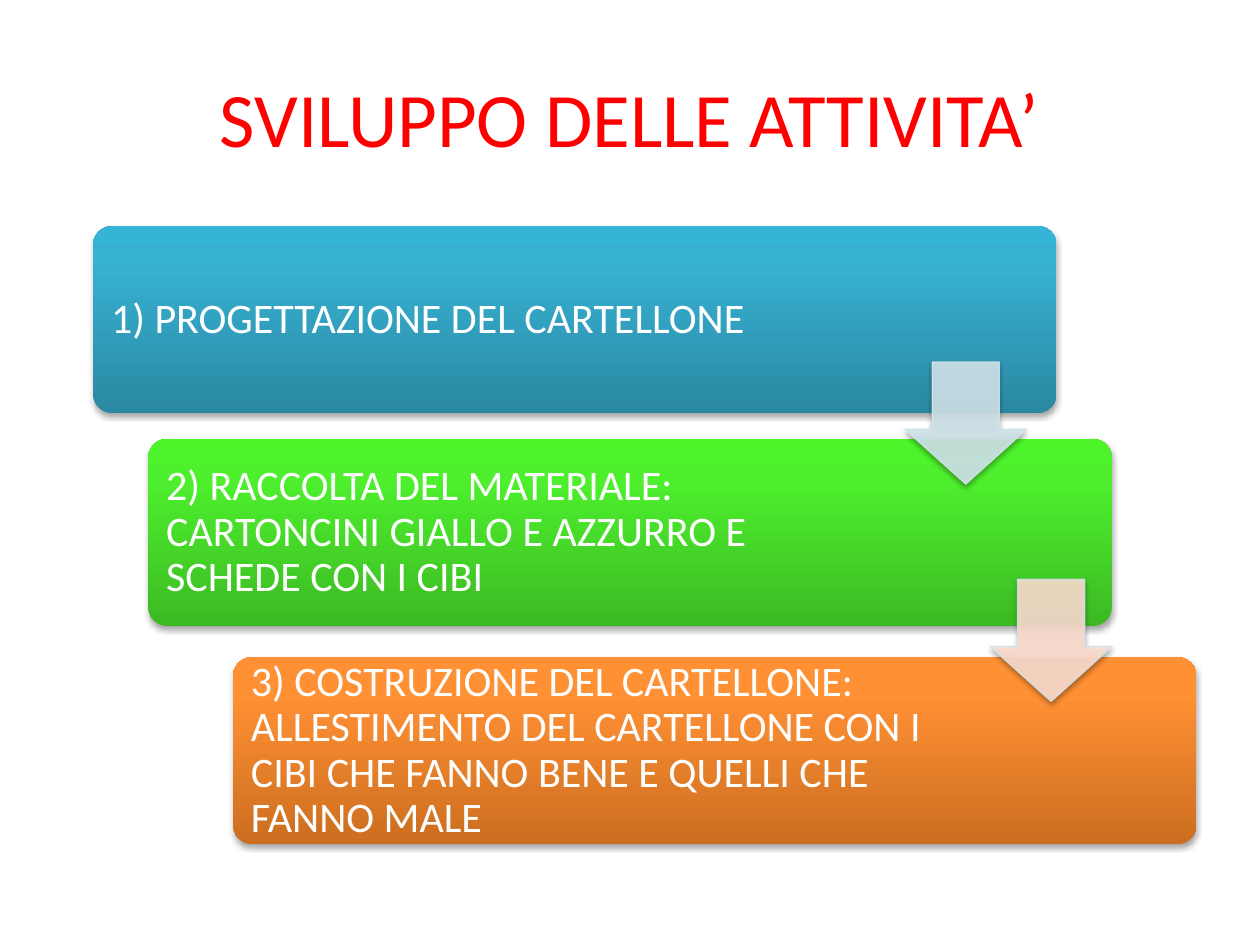
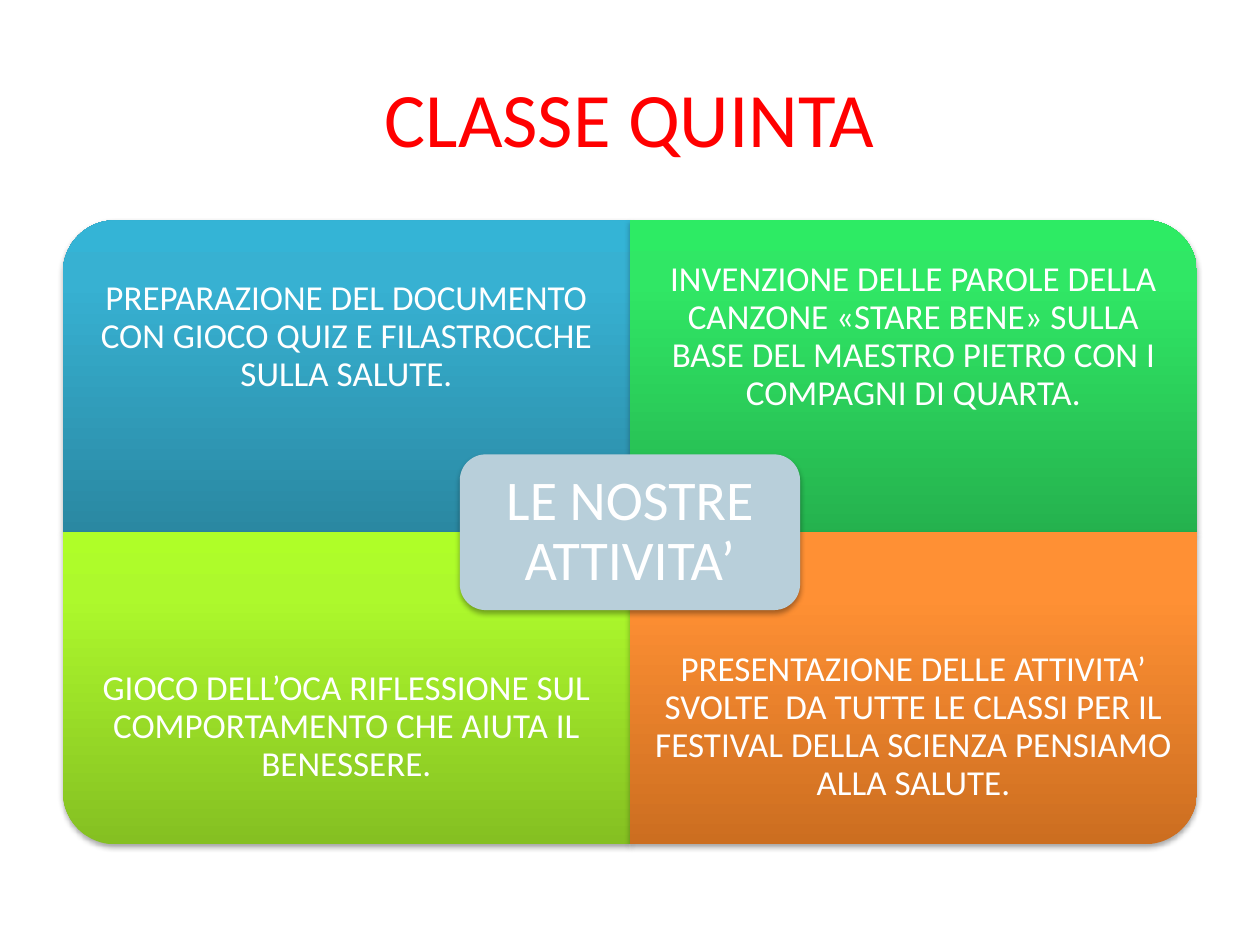
from dataclasses import dataclass
from typing import Any

import pptx
import pptx.dml.color
import pptx.enum.shapes
import pptx.enum.text
import pptx.oxml.ns
import pptx.util
from lxml import etree

Cm = pptx.util.Cm
Pt = pptx.util.Pt
qn = pptx.oxml.ns.qn
FORM = pptx.enum.shapes.MSO_SHAPE
ALIGN = pptx.enum.text.PP_ALIGN
MID = pptx.enum.text.MSO_ANCHOR.MIDDLE

# Shared look
FONT = "Calibri"
RED, WHITE, PALE, PEACH = "FF0000", "FFFFFF", "D0E3EA", "FCDDCF"
STEEL = "B8CFDA"  # dark enough for white text to stand out
BLUE = ("2A88A2", "37B1D2", "34B4D6")
GREEN = ("3CB923", "4EF02E", "4CF52A")
MINT = ("25B24E", "30E765", "2DEB64")
LIME = ("85C022", "ADF92C", "AFFE28")
AMBER = ("CC6E20", "FF9034", "FF9136")
STOPS = (0, 80, 100)


@dataclass
class Box:
    """Place and size in centimetres."""
    left: float
    top: float
    wide: float
    high: float

    def turned(self) -> "Box":
        """The same centre with width and height swapped."""
        gap = (self.wide - self.high) / 2
        return Box(self.left + gap, self.top - gap, self.high, self.wide)

    def lengths(self) -> tuple:
        return Cm(self.left), Cm(self.top), Cm(self.wide), Cm(self.high)


@dataclass
class Step:
    left: float
    top: float
    span: float
    tones: tuple
    text: str


@dataclass
class Arrow:
    left: float
    top: float
    tone: str


@dataclass
class Tile:
    col: int
    row: int
    turn: int
    tones: tuple
    text: str


STEPS = [
    Step(1.88, 4.56, 15.37, BLUE, "1) PROGETTAZIONE DEL CARTELLONE"),
    Step(2.99, 8.85, 15.04, GREEN, "2) RACCOLTA DEL MATERIALE: CARTONCINI "
         "GIALLO E AZZURRO E SCHEDE CON I CIBI"),
    Step(4.7, 13.25, 15.04, AMBER, "3) COSTRUZIONE DEL CARTELLONE: "
         "ALLESTIMENTO DEL CARTELLONE CON I CIBI CHE FANNO BENE E QUELLI CHE "
         "FANNO MALE"),
]
ARROWS = [Arrow(18.24, 7.3, PALE), Arrow(19.96, 11.68, PEACH)]
TILES = [
    Tile(0, 0, 270, BLUE, "PREPARAZIONE DEL DOCUMENTO CON GIOCO QUIZ E "
         "FILASTROCCHE SULLA SALUTE."),
    Tile(1, 0, 0, MINT, "INVENZIONE DELLE PAROLE DELLA CANZONE «STARE BENE» "
         "SULLA BASE DEL MAESTRO PIETRO CON I COMPAGNI DI QUARTA."),
    Tile(0, 1, 180, LIME, "GIOCO DELL’OCA RIFLESSIONE SUL COMPORTAMENTO CHE "
         "AIUTA IL BENESSERE."),
    Tile(1, 1, 90, AMBER, "PRESENTAZIONE DELLE ATTIVITA’ SVOLTE  DA TUTTE LE "
         "CLASSI PER IL FESTIVAL DELLA SCIENZA PENSIAMO ALLA SALUTE."),
]


def hue(code: str) -> Any:
    return pptx.dml.color.RGBColor.from_string(code)


def apply(thing: Any, values: dict) -> None:
    for name, value in values.items():
        setattr(thing, name, value)


def node(parent: Any, tag: str, **marks: Any) -> Any:
    texts = {name: str(value) for name, value in marks.items()}
    return etree.SubElement(parent, qn(tag), texts)


def write(shape: Any, text: str, size: int, pad: float, tone: str = WHITE,
          align: Any = ALIGN.CENTER, pitch: float = 0.9) -> None:
    """Fill a shape with one formatted paragraph."""
    frame = shape.text_frame
    frame.text = text
    sides = ("left", "top", "right", "bottom")
    apply(frame, {"word_wrap": True, "vertical_anchor": MID,
                  **{f"margin_{side}": Cm(pad) for side in sides}})
    para = frame.paragraphs[0]
    apply(para, {"alignment": align, "line_spacing": pitch})
    apply(para.font, {"name": FONT, "size": Pt(size)})
    para.font.color.rgb = hue(tone)


def label(slide: Any, box: Box, text: str, size: int, pad: float,
          align: Any = ALIGN.CENTER) -> None:
    write(slide.shapes.add_textbox(*box.lengths()), text, size, pad,
          align=align)


def shade(shape: Any) -> None:
    """Give a soft shadow straight below."""
    shape.shadow.inherit = False
    effects = shape._element.spPr.find(qn("a:effectLst"))
    cast = node(effects, "a:outerShdw", blurRad=Pt(3.1), dist=Pt(1.8),
                dir=5400000, rotWithShape=0)
    node(node(cast, "a:srgbClr", val="000000"), "a:alpha", val=35000)


def blend(shape: Any, tones: tuple) -> None:
    """Fill from the bottom up, upright however the shape is turned."""
    grad = node(shape._element.spPr, "a:gradFill", rotWithShape=0)
    stops = node(grad, "a:gsLst")
    for place, tone in zip(STOPS, tones):
        stop = node(stops, "a:gs", pos=place * 1000)
        node(stop, "a:srgbClr", val=tone)
    node(grad, "a:lin", ang=16200000, scaled=0)


def draw(slide: Any, form: Any, box: Box, paint: Any,
         bends: tuple = (), turn: int = 0) -> Any:
    """Draw a shaded shape with a plain colour or a tuple of tones."""
    shape = slide.shapes.add_shape(form, *box.lengths())
    shape.rotation = turn
    for index, bend in enumerate(bends):
        shape.adjustments[index] = bend
    if isinstance(paint, tuple):
        blend(shape, paint)
    else:
        shape.fill.solid()
        shape.fill.fore_color.rgb = hue(paint)
    shape.line.fill.background()
    shade(shape)
    return shape


def point(slide: Any, arrow: Arrow) -> None:
    """Draw a slightly clear down arrow with a thin edge."""
    shape = draw(slide, FORM.DOWN_ARROW,
                 Box(arrow.left, arrow.top, 2.46, 2.46), arrow.tone,
                 (0.55, 0.45))
    shape.line.color.rgb = hue(PALE)
    shape.line.width = Pt(0.75)
    for tone in shape._element.spPr.findall(".//" + qn("a:solidFill")):
        node(tone[0], "a:alpha", val=90000)


def start(deck: Any, text: str) -> Any:
    """Add a slide with its red title."""
    slide = deck.slides.add_slide(deck.slide_layouts[5])
    title = slide.shapes.title
    place = Box(1.27, 0.76, 22.86, 3.18).lengths()
    apply(title, dict(zip(("left", "top", "width", "height"), place)))
    write(title, text, 44, 0.25, RED, pitch=1.0)
    return slide


def stairs(deck: Any) -> None:
    slide = start(deck, "SVILUPPO DELLE ATTIVITA’")
    wide, high, inset = 19.42, 3.77, 0.11
    for step in STEPS:
        draw(slide, FORM.ROUNDED_RECTANGLE,
             Box(step.left, step.top, wide, high), step.tones, (0.1,))
        label(slide, Box(step.left + inset, step.top + inset, step.span,
                         high - 2 * inset),
              step.text, 24, 0.25, ALIGN.LEFT)
    for arrow in ARROWS:
        point(slide, arrow)


def matrix(deck: Any) -> None:
    slide = start(deck, "CLASSE QUINTA")
    left, top, wide, high, deep = 1.27, 4.44, 11.43, 6.29, 4.72
    for tile in TILES:
        box = Box(left + tile.col * wide, top + tile.row * high, wide, high)
        draw(slide, FORM.ROUND_1_RECTANGLE,
             box.turned() if tile.turn % 180 else box, tile.tones,
             turn=tile.turn)
        # Text keeps to the outer edge, clear of the hub
        label(slide, Box(box.left, box.top + tile.row * (high - deep),
                         wide, deep), tile.text, 20, 0.4)
    # Hub over the middle of the grid
    across, tall = 6.86, 3.14
    hub = draw(slide, FORM.ROUNDED_RECTANGLE,
               Box(left + wide - across / 2, top + high - tall / 2,
                   across, tall), STEEL)
    write(hub, "LE NOSTRE ATTIVITA’", 32, 0.34)


def main() -> None:
    deck = pptx.Presentation()
    apply(deck, {"slide_width": Cm(25.4), "slide_height": Cm(19.05)})
    stairs(deck)
    matrix(deck)
    deck.save("out.pptx")


if __name__ == "__main__":
    main()
